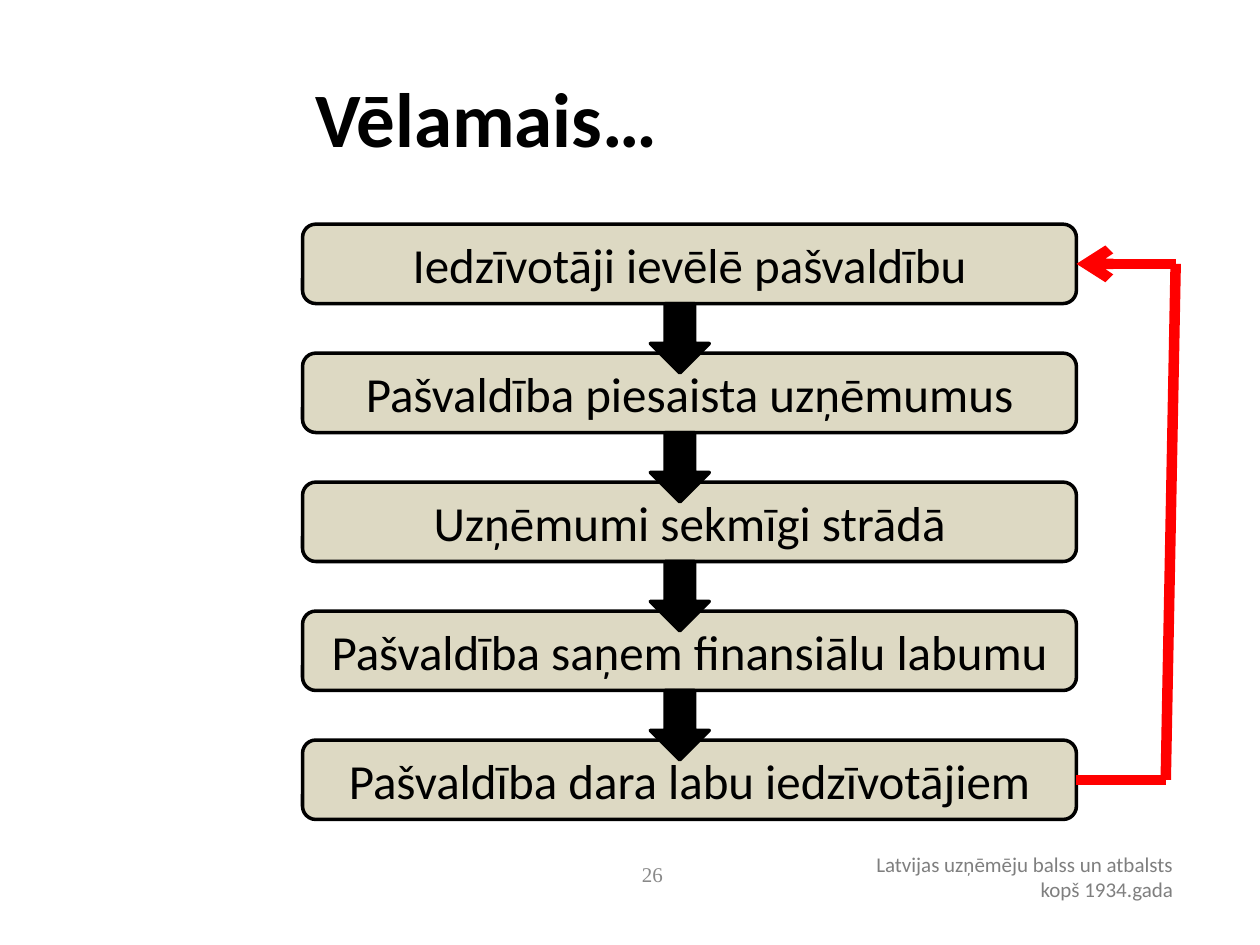
import pptx
import pptx.dml.color
import pptx.enum.shapes
import pptx.enum.text
import pptx.oxml
import pptx.oxml.ns
import pptx.util

Cm, Pt = pptx.util.Cm, pptx.util.Pt
SHAPE = pptx.enum.shapes.MSO_SHAPE
ALIGN = pptx.enum.text.PP_ALIGN
ANCHOR = pptx.enum.text.MSO_ANCHOR

TITLE = "Vēlamais…"
STEPS = [
    "Iedzīvotāji ievēlē pašvaldību",
    "Pašvaldība piesaista uzņēmumus",
    "Uzņēmumi sekmīgi strādā",
    "Pašvaldība saņem finansiālu labumu",
    "Pašvaldība dara labu iedzīvotājiem",
]
FOOTER = "Latvijas uzņēmēju balss un atbalsts kopš 1934.gada"
PAGE = "26"
COLORS = {"black": "000000", "box": "DDD9C3", "loop": "FF0000",
          "footer": "7F7F7F", "page": "898989", "white": "FFFFFF"}

# Lengths in cm
BOX_LEFT, BOX_TOP, BOX_W, BOX_H, PITCH = 6.1, 4.52, 15.6, 1.6, 2.6
ARROW_LEFT, ARROW_W, ARROW_H = 13.11, 1.19, 1.4
LOOP_TOP_X, LOOP_BOTTOM_X = 23.7, 23.5


def rgb(name):
    return pptx.dml.color.RGBColor.from_string(COLORS[name])


def write(sp, text, size, color, align, anchor=ANCHOR.MIDDLE,
          font="Calibri", bold=False):
    tf = sp.text_frame
    tf.word_wrap = True
    tf.vertical_anchor = anchor
    p = tf.paragraphs[0]
    p.alignment = align
    r = p.add_run()
    r.text = text
    r.font.size, r.font.name, r.font.bold = Pt(size), font, bold
    r.font.color.rgb = rgb(color)


def add_block(slide, kind, left, top, width, height, fill, line=None):
    sp = slide.shapes.add_shape(kind, Cm(left), Cm(top), Cm(width), Cm(height))
    sp.shadow.inherit = False
    sp.fill.solid()
    sp.fill.fore_color.rgb = rgb(fill)
    if line:
        sp.line.color.rgb = rgb(line)
        sp.line.width = Pt(2)
    else:
        sp.line.fill.background()
    return sp


def add_loop_line(slide, x1, y1, x2, y2):
    cx = slide.shapes.add_connector(
        pptx.enum.shapes.MSO_CONNECTOR.STRAIGHT, Cm(x1), Cm(y1), Cm(x2), Cm(y2))
    cx.line.color.rgb = rgb("loop")
    cx.line.width = Pt(6)
    spPr = cx._element.spPr
    spPr.append(pptx.oxml.parse_xml(
        f"<a:effectLst {pptx.oxml.ns.nsdecls('a')}/>"))
    return cx


def main():
    prs = pptx.Presentation()
    prs.slide_width, prs.slide_height = Cm(25.4), Cm(19.05)
    s = prs.slides.add_slide(prs.slide_layouts[5])

    footer = add_block(s, SHAPE.RECTANGLE, 17.3, 17.04, 6.6, 1.3, "white")
    write(footer, FOOTER, 12, "footer", ALIGN.RIGHT, ANCHOR.TOP)

    title = s.shapes.title
    title.left, title.top = Cm(BOX_LEFT), Cm(0.76)
    title.width, title.height = Cm(17.6), Cm(3.18)
    write(title, TITLE, 44, "black", ALIGN.LEFT, bold=True)

    page = s.shapes.add_textbox(Cm(10.19), Cm(17.12), Cm(5.92), Cm(1.02))
    write(page, PAGE, 12, "page", ALIGN.CENTER, font="Times New Roman")

    tops = [BOX_TOP + i * PITCH for i in range(len(STEPS))]
    boxes = []
    for step, top in zip(STEPS, tops):
        box = add_block(s, SHAPE.ROUNDED_RECTANGLE, BOX_LEFT, top,
                        BOX_W, BOX_H, "box", "black")
        write(box, step, 28, "black", ALIGN.CENTER)
        boxes.append(box)
    for top in tops[:-1]:
        add_block(s, SHAPE.DOWN_ARROW, ARROW_LEFT, top + BOX_H,
                  ARROW_W, ARROW_H, "black", "black")

    right = BOX_LEFT + BOX_W
    first_y, last_y = tops[0] + BOX_H / 2, tops[-1] + BOX_H / 2
    start = add_loop_line(s, right, last_y, LOOP_BOTTOM_X, last_y)
    start.begin_connect(boxes[-1], 3)
    add_loop_line(s, LOOP_TOP_X, first_y, LOOP_BOTTOM_X, last_y)
    end = add_loop_line(s, LOOP_TOP_X, first_y, right, first_y)
    end.end_connect(boxes[0], 3)
    end.line._get_or_add_ln().append(pptx.oxml.parse_xml(
        f"<a:tailEnd {pptx.oxml.ns.nsdecls('a')} type='arrow'/>"))

    prs.save("out.pptx")


if __name__ == "__main__":
    main()
